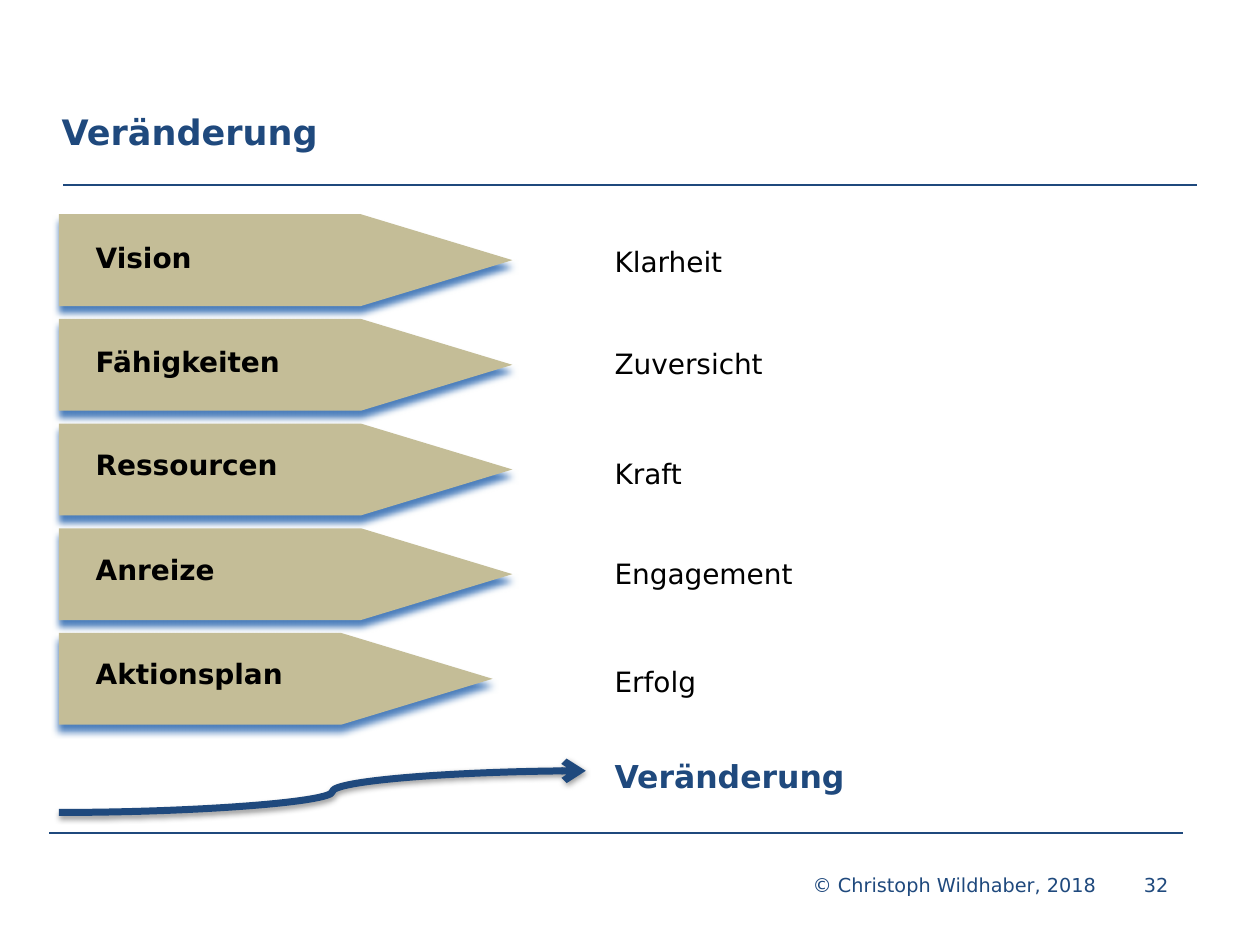
"""Build the slide on the five conditions of change."""
from pptx import Presentation
from pptx import util as u
from pptx.dml.color import RGBColor
from pptx.enum import shapes, text
from pptx.oxml import parse_xml
from pptx.oxml.ns import nsdecls, qn

NAVY = RGBColor(0x1F, 0x49, 0x7D)
SAND = RGBColor(0xC4, 0xBD, 0x97)
BLUE = RGBColor(0x4F, 0x81, 0xBD)
BLACK = RGBColor(0, 0, 0)

CONDITIONS = [
    ("Vision", 4.72, "Klarheit", 4.8, 9.14),
    ("Fähigkeiten", 6.83, "Zuversicht", 6.86, 9.14),
    ("Ressourcen", 8.89, "Kraft", 9.07, 9.14),
    ("Anreize", 11.02, "Engagement", 11.1, 9.14),
    ("Aktionsplan", 13.11, "Erfolg", 13.28, 8.74),
]
FIRST_ARROW, ARROW_STEP = 4.32, 2.11
LABEL_LEFT, EFFECT_LEFT = 1.68, 12.14


class SlideBuilder:
    font = "DejaVu Sans"

    def __init__(self, slide):
        self.slide = slide

    def format_text(self, shape, size, color, bold=False):
        for paragraph in shape.text_frame.paragraphs:
            paragraph.alignment = text.PP_ALIGN.LEFT
            for run in paragraph.runs:
                run.font.name = self.font
                run.font.size = u.Pt(size)
                run.font.bold = bold
                run.font.color.rgb = color

    def shadow(self, shape, color, alpha, blur, distance):
        properties = shape._element.spPr
        effects = properties.find(qn("a:effectLst"))
        if effects is None:
            effects = parse_xml(f"<a:effectLst {nsdecls('a')}/>")
            properties.append(effects)
        if alpha:
            effects.append(parse_xml(
                f'<a:outerShdw {nsdecls("a")} blurRad="{u.Pt(blur)}" dist="{u.Pt(distance)}" '
                f'dir="5400000" rotWithShape="0"><a:srgbClr val="{color}">'
                f'<a:alpha val="{alpha * 1000}"/></a:srgbClr></a:outerShdw>'))

    def title(self, wording, left, top, width, height):
        shape = self.slide.shapes.title
        shape.left, shape.top = u.Cm(left), u.Cm(top)
        shape.width, shape.height = u.Cm(width), u.Cm(height)
        shape.text_frame.text = wording
        shape.text_frame.vertical_anchor = text.MSO_ANCHOR.TOP
        self.format_text(shape, 20, NAVY, True)

    def label(self, wording, left, top, width, height=0.94, size=16, color=BLACK, bold=False):
        shape = self.slide.shapes.add_textbox(u.Cm(left), u.Cm(top), u.Cm(width), u.Cm(height))
        frame = shape.text_frame
        frame.text = wording
        frame.word_wrap = True
        frame.auto_size = text.MSO_AUTO_SIZE.SHAPE_TO_FIT_TEXT
        self.format_text(shape, size, color, bold)
        return shape

    def footer(self, wording, left, top, width, height, tab):
        shape = self.label(wording, left, top, width, height, 11, NAVY)
        frame = shape.text_frame
        frame.auto_size = text.MSO_AUTO_SIZE.NONE
        frame.vertical_anchor = text.MSO_ANCHOR.MIDDLE
        frame.margin_left = u.Cm(0.58)
        frame.paragraphs[0]._p.get_or_add_pPr().append(parse_xml(
            f'<a:tabLst {nsdecls("a")}><a:tab pos="{u.Cm(tab)}" algn="l"/></a:tabLst>'))

    def block_arrow(self, left, top, width, height):
        shape = self.slide.shapes.add_shape(
            shapes.MSO_SHAPE.PENTAGON, u.Cm(left), u.Cm(top), u.Cm(width), u.Cm(height))
        shape.adjustments[0] = 1.65
        shape.fill.solid()
        shape.fill.fore_color.rgb = SAND
        shape.line.fill.background()
        shape.shadow.inherit = False
        self.shadow(shape, BLUE, 100, 4, 4)

    def connector(self, kind, start, end, width):
        line = self.slide.shapes.add_connector(kind, *map(u.Cm, start + end))
        line.line.color.rgb = NAVY
        line.line.width = u.Pt(width)
        return line

    def rule(self, left, top, length, width):
        line = self.connector(
            shapes.MSO_CONNECTOR.STRAIGHT, (left, top), (left + length, top), width)
        self.shadow(line, BLACK, 0, 0, 0)

    def curved_arrow(self, start, end):
        line = self.connector(shapes.MSO_CONNECTOR.CURVE, start, end, 4)
        line.line._get_or_add_ln().append(
            parse_xml(f'<a:tailEnd {nsdecls("a")} type="arrow"/>'))
        geometry = line._element.spPr.find(qn("a:prstGeom"))
        geometry.find(qn("a:avLst")).append(
            parse_xml(f'<a:gd {nsdecls("a")} name="adj1" fmla="val 51900"/>'))
        self.shadow(line, BLACK, 38, 3.1, 1.6)


def main():
    presentation = Presentation()
    presentation.slide_width, presentation.slide_height = u.Cm(25.4), u.Cm(19.05)
    builder = SlideBuilder(presentation.slides.add_slide(presentation.slide_layouts[5]))

    builder.rule(0.99, 16.79, 22.86, 1.5)
    builder.footer("© Christoph Wildhaber, 2018\t32", 15.8, 17.35, 8.33, 0.99, 6.68)
    builder.rule(1.27, 3.73, 22.86, 1.25)
    builder.title("Veränderung", 0.99, 2.11, 23.14, 1.63)

    for index, (condition, label_top, effect, effect_top, width) in enumerate(CONDITIONS):
        builder.block_arrow(1.19, FIRST_ARROW + index * ARROW_STEP, width, 1.85)
        builder.label(condition, LABEL_LEFT, label_top, 6.48, bold=True)
        builder.label(effect, EFFECT_LEFT, effect_top, 7.54)

    builder.label("Veränderung", EFFECT_LEFT, 15.14, 6.17, 1.02, 18, NAVY, True)
    builder.curved_arrow((1.19, 16.38), (11.81, 15.54))
    presentation.save("out.pptx")


if __name__ == "__main__":
    main()
